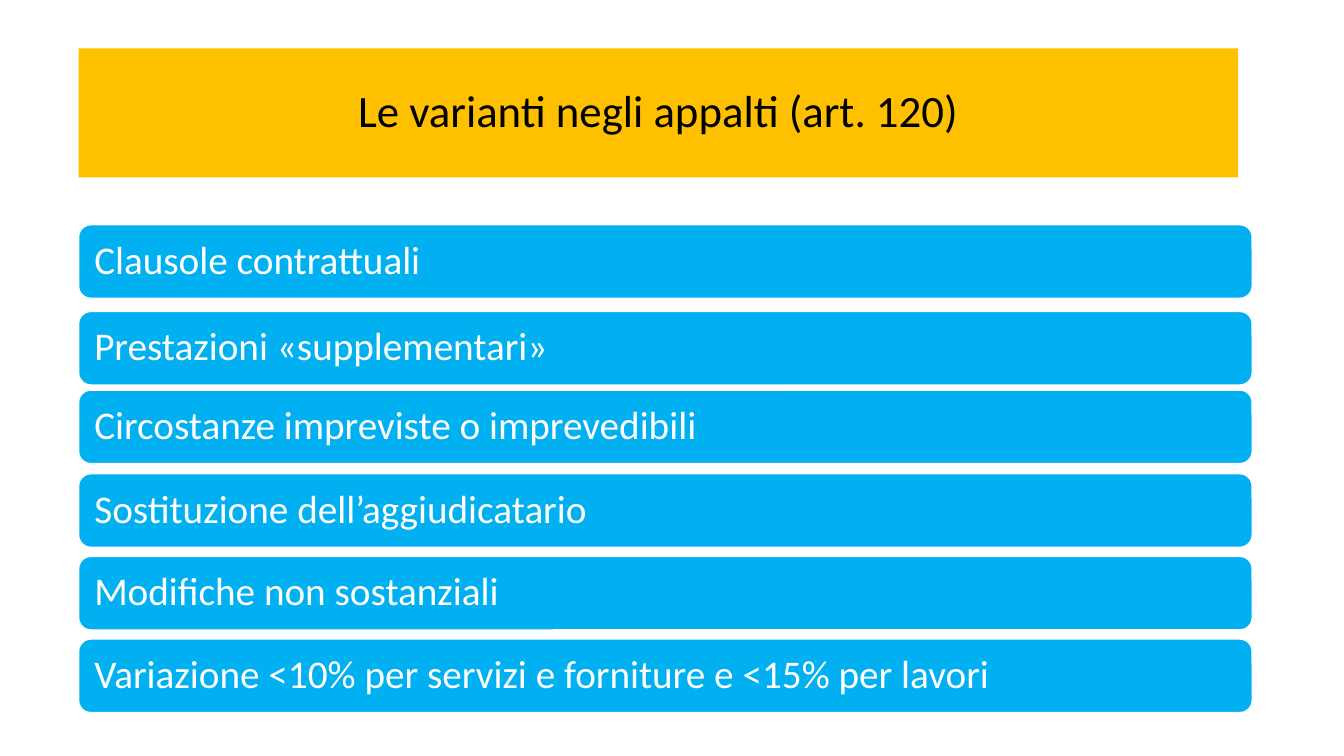
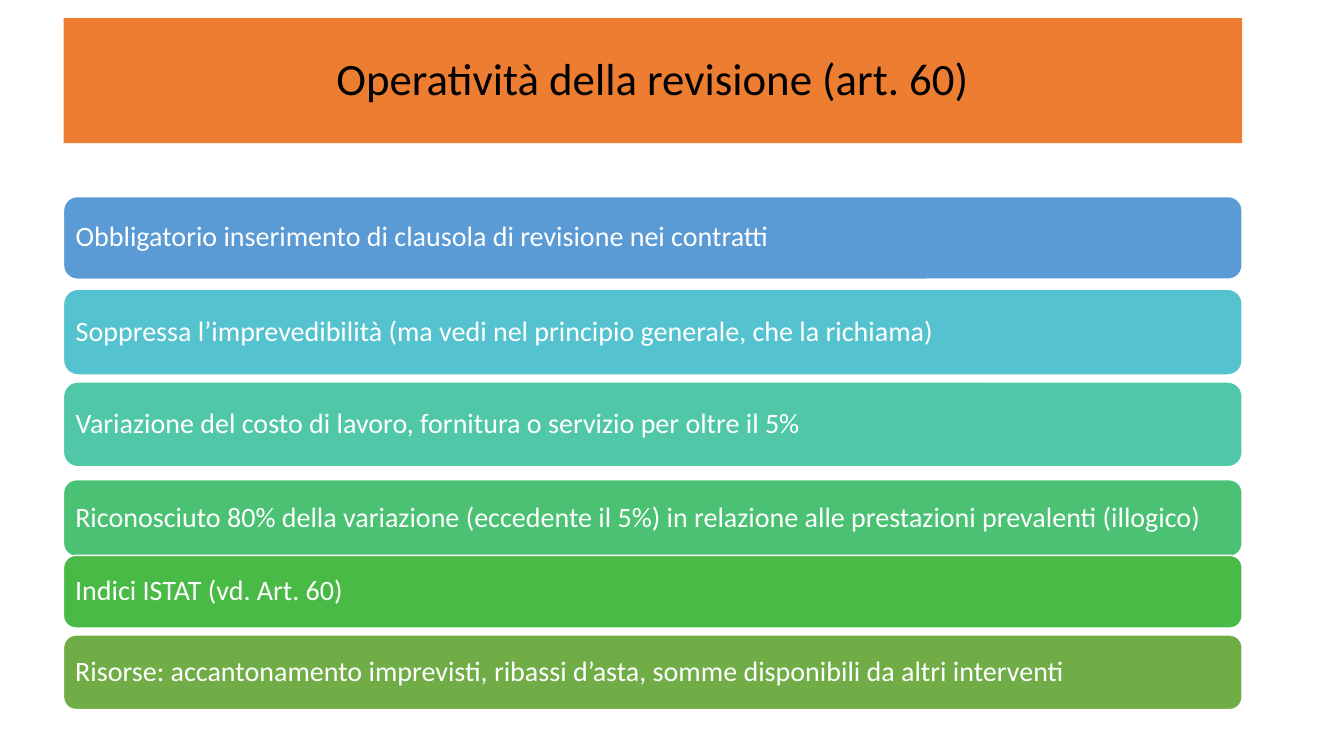
from pptx import Presentation
from pptx.dml.color import RGBColor
from pptx.enum.shapes import MSO_SHAPE
from pptx.enum.text import MSO_ANCHOR, MSO_AUTO_SIZE, PP_ALIGN
from pptx.util import Pt

PIXEL = 9144
FONT = "Calibri"
COLORS = {
    "black": "000000",
    "white": "FFFFFF",
    "amber": "FFC000",
    "orange": "ED7D31",
    "sky": "00B0F0",
    "blue": "5B9BD5",
    "cyan": "55C3CF",
    "teal": "50C8A7",
    "mint": "4BC174",
    "green": "4ABA46",
    "olive": "70AD47",
}
TITLE_STYLE = {"size": 32, "color": "black", "align": PP_ALIGN.CENTER, "inset": 10}
VARIATION_STYLE = {"size": 28, "color": "white", "align": PP_ALIGN.LEFT, "inset": 12}
REVISION_STYLE = {"size": 20, "color": "white", "align": PP_ALIGN.LEFT, "inset": 8}

VARIATIONS = {
    "title": "Le varianti negli appalti (art. 120)",
    "title_box": (78, 48, 1150, 128),
    "title_fill": "amber",
    "bars_left": 78,
    "bars_width": 1164,
    "style": VARIATION_STYLE,
    "bars": [
        ("Clausole contrattuali", 223, 73, "sky"),
        ("Prestazioni «supplementari»", 309, 73, "sky"),
        ("Circostanze impreviste o imprevedibili", 387, 73, "sky"),
        ("Sostituzione dell’aggiudicatario", 470, 73, "sky"),
        ("Modifiche non sostanziali", 552, 73, "sky"),
        ("Variazione <10% per servizi e forniture e <15% per lavori", 634, 73, "sky"),
    ],
}
REVISION = {
    "title": "Operatività della revisione (art. 60)",
    "title_box": (63, 18, 1169, 124),
    "title_fill": "orange",
    "bars_left": 63,
    "bars_width": 1169,
    "style": REVISION_STYLE,
    "bars": [
        ("Obbligatorio inserimento di clausola di revisione nei contratti", 195, 82, "blue"),
        ("Soppressa l’imprevedibilità (ma vedi nel principio generale, che la richiama)",
         287, 85, "cyan"),
        ("Variazione del costo di lavoro, fornitura o servizio per oltre il 5%", 379, 84, "teal"),
        ("Riconosciuto 80% della variazione (eccedente il 5%) in relazione alle "
         "prestazioni prevalenti (illogico)", 476, 76, "mint"),
        ("Indici ISTAT (vd. Art. 60)", 551, 72, "green"),
        ("Risorse: accantonamento imprevisti, ribassi d’asta, somme disponibili "
         "da altri interventi", 630, 74, "olive"),
    ],
}


def set_attributes(target, values):
    """Set each named attribute of the target."""
    for name, value in values.items():
        setattr(target, name, value)


def get_color(name):
    """Return the palette color with the given name."""
    return RGBColor.from_string(COLORS[name])


def fill_shape(shape, color):
    """Give the shape a solid fill."""
    shape.fill.solid()
    shape.fill.fore_color.rgb = get_color(color)


def write_text(shape, text, style):
    """Write one formatted paragraph in the middle of the shape."""
    frame = shape.text_frame
    frame.text = text
    inset = style["inset"] * PIXEL
    set_attributes(frame, {
        "word_wrap": True,
        "auto_size": MSO_AUTO_SIZE.NONE,
        "vertical_anchor": MSO_ANCHOR.MIDDLE,
        "margin_left": inset,
        "margin_right": inset,
        "margin_top": 0,
        "margin_bottom": 0,
    })
    paragraph = frame.paragraphs[0]
    set_attributes(paragraph, {"alignment": style["align"], "line_spacing": 0.9})
    font = paragraph.runs[0].font
    set_attributes(font, {"name": FONT, "size": Pt(style["size"])})
    font.color.rgb = get_color(style["color"])


def place_title(slide, text, box, color):
    """Turn the title placeholder into a colored band."""
    title = slide.shapes.title
    names = ("left", "top", "width", "height")
    set_attributes(title, {name: value * PIXEL for name, value in zip(names, box)})
    fill_shape(title, color)
    write_text(title, text, TITLE_STYLE)


def add_bar(slide, text, box, color, style):
    """Add a rounded bar with its text inside the given box."""
    bar = slide.shapes.add_shape(
        MSO_SHAPE.ROUNDED_RECTANGLE, *(value * PIXEL for value in box))
    bar.shadow.inherit = False
    fill_shape(bar, color)
    bar.line.color.rgb = get_color("white")
    bar.line.width = Pt(1)
    write_text(bar, text, style)


def add_list_slide(presentation, content):
    """Add a slide with a title band above a stack of bars."""
    slide = presentation.slides.add_slide(presentation.slide_layouts[5])
    place_title(slide, content["title"], content["title_box"], content["title_fill"])
    for text, top, height, color in content["bars"]:
        box = (content["bars_left"], top, content["bars_width"], height)
        add_bar(slide, text, box, color, content["style"])


def main():
    """Build and save the presentation."""
    presentation = Presentation()
    set_attributes(presentation, {"slide_width": 1333 * PIXEL, "slide_height": 750 * PIXEL})
    for content in (VARIATIONS, REVISION):
        add_list_slide(presentation, content)
    presentation.save("out.pptx")


if __name__ == "__main__":
    main()
